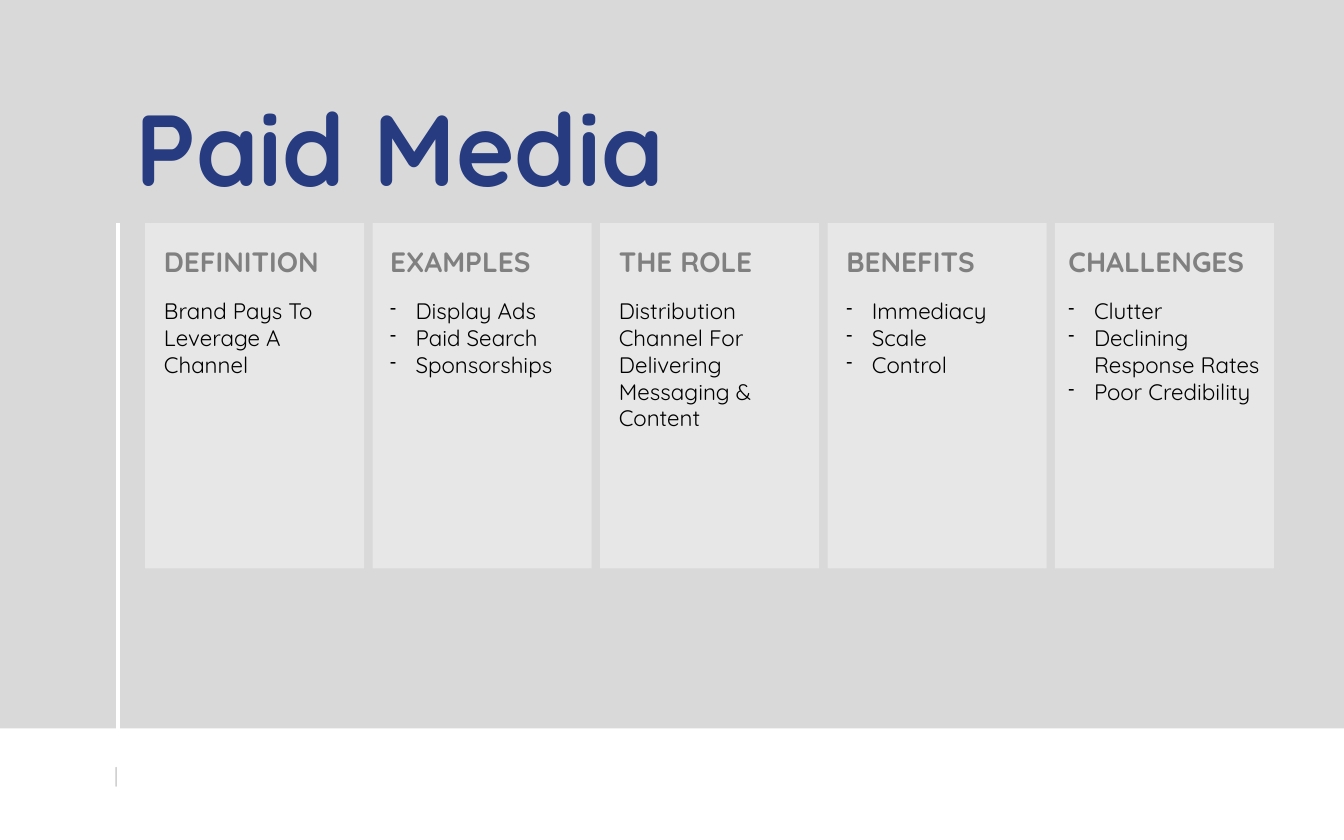
from dataclasses import dataclass

from lxml.etree import SubElement
from pptx import Presentation
from pptx.dml.color import RGBColor
from pptx.enum.shapes import MSO_CONNECTOR as Connector, MSO_SHAPE as Shape
from pptx.enum.text import MSO_ANCHOR as Anchor, MSO_AUTO_SIZE as AutoSize, PP_ALIGN as Align
from pptx.oxml.ns import qn
from pptx.util import Inches, Pt

WHITE = RGBColor(0xFF, 0xFF, 0xFF)
BLACK = RGBColor(0x00, 0x00, 0x00)
PANEL = RGBColor(0xD9, 0xD9, 0xD9)
MARK = RGBColor(0xBF, 0xBF, 0xBF)
HEADING = RGBColor(0x80, 0x80, 0x80)
NAVY = RGBColor(0x26, 0x3B, 0x80)
FONT = "Quicksand"
WIDTH, HEIGHT = 10, 6.25
CARD_WIDTH = 1.63
HEADING_WIDTH = 1.52


@dataclass
class Card:
    """Wording and text placement of one column."""
    heading: str
    lines: list
    listed: bool
    indent: float = 0.06
    text_width: float = 1.42


CARDS = [
    Card("DEFINITION", ["Brand Pays To Leverage A Channel"], False),
    Card("EXAMPLES", ["Display Ads", "Paid Search", "Sponsorships"], True, 0.05, 1.58),
    Card("THE ROLE", ["Distribution Channel For Delivering Messaging & Content"], False),
    Card("BENEFITS", ["Immediacy", "Scale", "Control"], True),
    Card("CHALLENGES", ["Clutter", "Declining Response Rates", "Poor Credibility"], True, 0.02, 1.79),
]


def add_dash(para):
    """Give a paragraph a small hanging dash."""
    properties = para._p.get_or_add_pPr()
    properties.set("marL", str(Inches(0.19)))
    properties.set("indent", str(-Inches(0.19)))
    SubElement(properties, qn("a:buSzPct")).set("val", "80000")
    SubElement(properties, qn("a:buChar")).set("char", "-")


def fill_text(frame, lines, size, color, bold=False, listed=False, left_inset=0.08):
    """Write lines as paragraphs with one style."""
    frame.margin_left, frame.margin_right = Inches(left_inset), Inches(0.08)
    frame.margin_top = frame.margin_bottom = Inches(0.04)
    frame.vertical_anchor = Anchor.TOP
    for index, line in enumerate(lines):
        para = frame.paragraphs[0] if index == 0 else frame.add_paragraph()
        para.alignment = Align.LEFT
        if listed:
            add_dash(para)
        span = para.add_run()
        span.text = line
        span.font.name, span.font.size = FONT, Pt(size)
        span.font.bold, span.font.color.rgb = bold, color


def add_text(page, box, lines, size, color, wrap=True, **style):
    """Add a text box that grows with its text."""
    frame = page.shapes.add_textbox(*map(Inches, box)).text_frame
    frame.word_wrap = wrap
    frame.auto_size = AutoSize.SHAPE_TO_FIT_TEXT
    fill_text(frame, lines, size, color, **style)


def add_panel(page, box, color, opacity=None):
    """Add a plain rectangle, translucent when an opacity is given."""
    panel = page.shapes.add_shape(Shape.RECTANGLE, *map(Inches, box))
    panel.shadow.inherit = False
    panel.line.fill.background()
    panel.fill.solid()
    panel.fill.fore_color.rgb = color
    if opacity is not None:
        tint = panel._element.spPr.find(qn("a:solidFill"))[0]
        SubElement(tint, qn("a:alpha")).set("val", str(opacity * 1000))


def add_backdrop(page, box):
    """Place the grey field, its white rule and the footer mark."""
    left, top, width, height = box
    add_panel(page, box, PANEL)
    add_text(page, (left + 0.77, top + height + 0.22, 0.26, 0.26), ["|"], 11, MARK, wrap=False)
    ends = (left + 0.88, top + height + 0.01, left + 0.88, top + 1.66)
    rule = page.shapes.add_connector(Connector.STRAIGHT, *map(Inches, ends))
    rule.line.color.rgb, rule.line.width = WHITE, Pt(2)
    SubElement(rule._element.spPr, qn("a:effectLst"))


def add_card_text(page, box, card):
    """Place the heading and the body of one card."""
    left, top = box[0] + card.indent, box[1]
    add_text(page, (left, top + 0.12, HEADING_WIDTH, 0.33), [card.heading], 15, HEADING, bold=True)
    add_text(page, (left, top + 0.51, card.text_width, 0.68), card.lines, 12, BLACK, listed=card.listed)


def add_cards(page, box, cards):
    """Spread equal cards over the box."""
    left, top, width, height = box
    step = (width - CARD_WIDTH) / (len(cards) - 1)
    places = [(left + index * step, top, CARD_WIDTH, height) for index in range(len(cards))]
    for place in places:
        add_panel(page, place, WHITE, opacity=38)
    for place, card in zip(places, cards):
        add_card_text(page, place, card)


def add_title(page, box, text):
    """Move the title placeholder into the box, in front of the backdrop."""
    title = page.shapes.title
    title.left, title.top, title.width, title.height = map(Inches, box)
    title.text_frame.auto_size = AutoSize.NONE
    title.text_frame.word_wrap = True
    fill_text(title.text_frame, [text], 54, NAVY, bold=True, left_inset=0)
    page.shapes._spTree.append(title._element)


def main():
    """Build and save the deck."""
    deck = Presentation()
    deck.slide_width, deck.slide_height = Inches(WIDTH), Inches(HEIGHT)
    page = deck.slides.add_slide(deck.slide_layouts[5])
    add_backdrop(page, (0, 0, WIDTH, 5.42))
    add_cards(page, (1.08, 1.66, 8.4, 2.57), CARDS)
    add_title(page, (1.01, 0.6, 8.04, 0.94), "Paid Media")
    deck.save("out.pptx")


if __name__ == "__main__":
    main()
